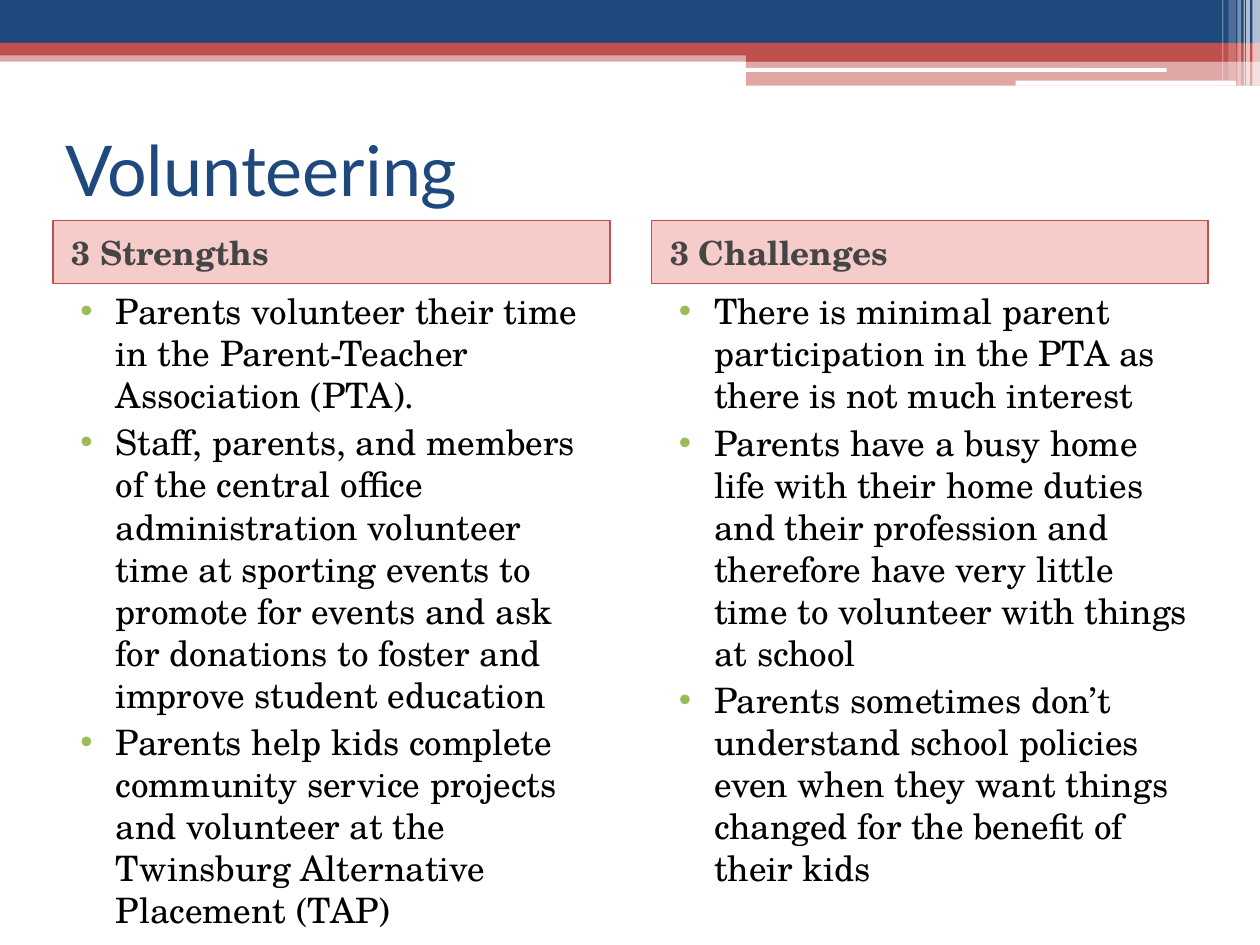
from lxml import etree
from pptx import Presentation
from pptx.dml.color import RGBColor
from pptx.enum import shapes, text
from pptx.oxml.ns import qn
from pptx.util import Inches, Pt

NAVY, RED, WHITE, GREEN = "1F497D", "C0504D", "FFFFFF", "9BBB59"
HEADING_FONT, BODY_FONT = "Lato", "TeX Gyre Schola"

TITLE = "Volunteering"
COLUMNS = [
    ("3 Strengths", 4.83, [
        "Parents volunteer their time in the Parent-Teacher Association (PTA).",
        "Staff, parents, and members of the central office administration volunteer "
        "time at sporting events to promote for events and ask for donations to "
        "foster and improve student education",
        "Parents help kids complete community service projects and volunteer at the "
        "Twinsburg Alternative Placement (TAP)",
    ]),
    ("3 Challenges", 4.75, [
        "There is minimal parent participation in the PTA as there is not much interest",
        "Parents have a busy home life with their home duties and their profession and "
        "therefore have very little time to volunteer with things at school",
        "Parents sometimes don’t understand school policies even when they want things "
        "changed for the benefit of their kids",
    ]),
]

# left, top, width, height, colour, opacity in percent
BANDS = [
    (0, 0.4, 10, 0.09, RED, 50),
    (0, 0, 10, 0.34, NAVY, 100),
    (0, 0.34, 10, 0.1, RED, 100),
    (5.92, 0.39, 4.08, 0.1, RED, 100),
    (5.92, 0.48, 4.08, 0.2, RED, 50),
]
ROUNDED_BARS = [(5.91, 0.54, 3.35, 0.03), (8.06, 0.64, 1.75, 0.04)]
# left, width, height, opacity in percent
STRIPES = [
    (9.94, 0.06, 0.68, 65),
    (9.89, 0.03, 0.68, 65),
    (9.87, 0.01, 0.68, 60),
    (9.82, 0.03, 0.68, 40),
    (9.75, 0.06, 0.64, 20),
    (9.7, 0.01, 0.64, 30),
]
MARGIN, COLUMN_WIDTH, COLUMN_STEP = 0.42, 4.42, 4.75
HEADER_TOP, HEADER_HEIGHT = 1.75, 0.5


def rgb(value):
    return RGBColor.from_string(value)


def add_block(slide, place, color, opacity=100, rounded=False):
    kind = shapes.MSO_SHAPE.ROUNDED_RECTANGLE if rounded else shapes.MSO_SHAPE.RECTANGLE
    block = slide.shapes.add_shape(kind, *map(Inches, place))
    block.shadow.inherit = False
    block.fill.solid()
    block.fill.fore_color.rgb = rgb(color)
    block.line.fill.background()
    if opacity < 100:
        fill_color = block.fill._xPr.find(qn("a:solidFill"))[0]
        etree.SubElement(fill_color, qn("a:alpha"), val=str(opacity * 1000))
    return block


def write(para, words, font, size, color, bold=False):
    para.alignment = text.PP_ALIGN.LEFT
    span = para.add_run()
    span.text = words
    span.font.name = font
    span.font.size = Pt(size)
    span.font.bold = bold
    span.font.color.rgb = rgb(color)


def indent(para, left, first=0):
    props = para._p.get_or_add_pPr()
    props.set("marL", str(Inches(left)))
    props.set("indent", str(Inches(first)))
    para.space_before = Pt(3)
    return props


def add_bullet(para, color):
    props = indent(para, 0.4, -0.28)
    bullet_color = etree.SubElement(props, qn("a:buClr"))
    etree.SubElement(bullet_color, qn("a:srgbClr"), val=color)
    etree.SubElement(props, qn("a:buFont"), typeface="Arial")
    etree.SubElement(props, qn("a:buChar"), char="•")


def add_text_frame(slide, place, anchor):
    frame = slide.shapes.add_textbox(*map(Inches, place)).text_frame
    frame.word_wrap = True
    frame.vertical_anchor = anchor
    return frame


def add_column(slide, left, heading, body_height, points):
    header = add_block(slide, (left, HEADER_TOP, COLUMN_WIDTH, HEADER_HEIGHT), "DD3530", 25)
    header.line.color.rgb = rgb(RED)
    header.line.width = Pt(1)
    header.text_frame.vertical_anchor = text.MSO_ANCHOR.MIDDLE
    para = header.text_frame.paragraphs[0]
    indent(para, 0.05)
    write(para, heading, BODY_FONT, 19, "454545", bold=True)

    place = (left, HEADER_TOP + HEADER_HEIGHT, COLUMN_WIDTH, body_height)
    frame = add_text_frame(slide, place, text.MSO_ANCHOR.TOP)
    for number, point in enumerate(points):
        para = frame.add_paragraph() if number else frame.paragraphs[0]
        add_bullet(para, GREEN)
        write(para, point, BODY_FONT, 20, "000000")


def main():
    deck = Presentation()
    deck.slide_width, deck.slide_height = Inches(10), Inches(7.5)
    slide = deck.slides.add_slide(deck.slide_layouts[6])

    for *place, color, opacity in BANDS:
        add_block(slide, place, color, opacity)
    for place in ROUNDED_BARS:
        add_block(slide, place, WHITE, rounded=True)
    for left, width, height, opacity in STRIPES:
        add_block(slide, (left, 0, width, height), WHITE, opacity)

    frame = add_text_frame(slide, (MARGIN, 0.75, 9.17, 1.17), text.MSO_ANCHOR.MIDDLE)
    write(frame.paragraphs[0], TITLE, HEADING_FONT, 40, NAVY)
    for number, column in enumerate(COLUMNS):
        add_column(slide, MARGIN + number * COLUMN_STEP, *column)

    deck.save("out.pptx")


if __name__ == "__main__":
    main()
